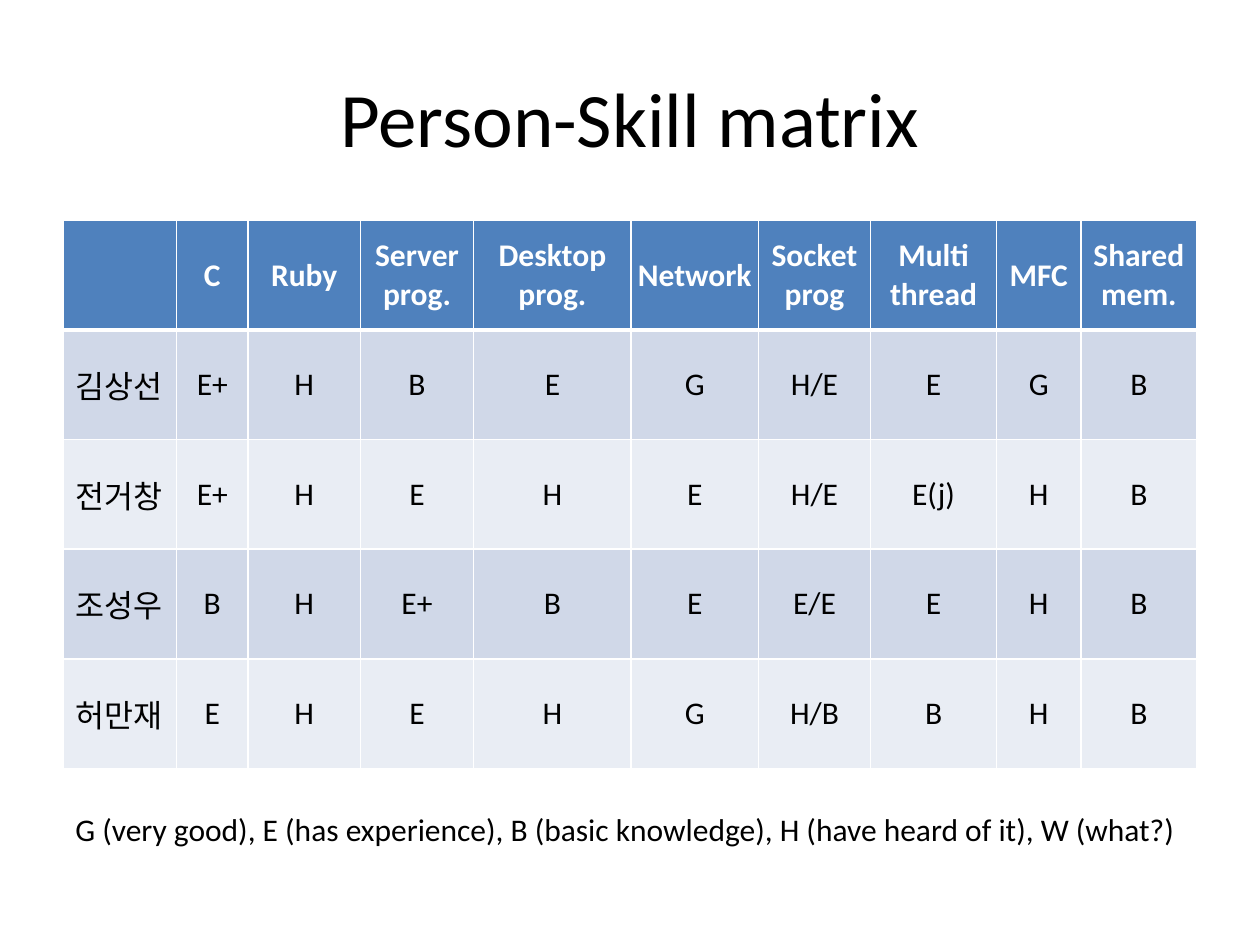
from pptx import Presentation
from pptx.dml.color import RGBColor
from pptx.enum.text import MSO_ANCHOR as Anchor, MSO_AUTO_SIZE as AutoSize, PP_ALIGN as Align
from pptx.oxml import parse_xml
from pptx.oxml.ns import nsdecls
from pptx.util import Inches, Pt

HEADERS = ["", "C", "Ruby", "Server prog.", "Desktop prog.", "Network",
           "Socket prog", "Multi\nthread", "MFC", "Shared mem."]
PEOPLE = [
    ["김상선", "E+", "H", "B", "E", "G", "H/E", "E", "G", "B"],
    ["전거창", "E+", "H", "E", "H", "E", "H/E", "E(j)", "H", "B"],
    ["조성우", "B", "H", "E+", "B", "E", "E/E", "E", "H", "B"],
    ["허만재", "E", "H", "E", "H", "G", "H/B", "B", "H", "B"],
]
COLUMN_WIDTHS = [0.9, 0.57, 0.89, 0.9, 1.25, 1.01, 0.89, 1, 0.67, 0.92]
ROW_HEIGHT = 0.87
LEGEND = ("G (very good), E (has experience), B (basic knowledge), "
          "H (have heard of it), W (what?)")


def color(hex_string):
    return RGBColor.from_string(hex_string)


class SlideBuilder:
    font = "Calibri"
    ink, white, header_fill = "000000", "FFFFFF", "4F81BD"
    bands = ("D0D8E8", "E9EDF4")
    body_size = 18

    def __init__(self, page):
        self.page = page

    def format_text(self, frame, size, ink, align, bold=False):
        for para in frame.paragraphs:
            para.alignment = align
            for span in para.runs:
                span.font.name = self.font
                span.font.size = Pt(size)
                span.font.bold = bold
                span.font.color.rgb = color(ink)

    def title(self, text, left, top, width, height):
        box = self.page.shapes.title
        box.left, box.top = Inches(left), Inches(top)
        box.width, box.height = Inches(width), Inches(height)
        box.text_frame.text = text
        box.text_frame.vertical_anchor = Anchor.MIDDLE
        self.format_text(box.text_frame, 44, self.ink, Align.CENTER)

    def text(self, text, left, top, width, height):
        box = self.page.shapes.add_textbox(Inches(left), Inches(top), Inches(width), Inches(height))
        frame = box.text_frame
        frame.word_wrap = True
        frame.auto_size = AutoSize.SHAPE_TO_FIT_TEXT
        frame.text = text
        self.format_text(frame, self.body_size, self.ink, Align.LEFT)

    def cell_borders(self, cell, top, bottom):
        """Draw white borders; top and bottom widths are in points."""
        properties = cell._tc.get_or_add_tcPr()
        widths = {"lnL": 1, "lnR": 1, "lnT": top, "lnB": bottom}
        for position, (side, width) in enumerate(widths.items()):
            properties.insert(position, parse_xml(
                f'<a:{side} {nsdecls("a")} w="{Pt(width)}"><a:solidFill>'
                f'<a:srgbClr val="{self.white}"/></a:solidFill></a:{side}>'))

    def table(self, rows, left, top, widths, row_height):
        """Add a table with a header row, a name column and banded rows."""
        table = self.page.shapes.add_table(
            len(rows), len(widths), Inches(left), Inches(top),
            Inches(sum(widths)), Inches(row_height * len(rows))).table
        for column, width in zip(table.columns, widths):
            column.width = Inches(width)
        for r, values in enumerate(rows):
            table.rows[r].height = Inches(row_height)
            header = r == 0
            fill = self.header_fill if header else self.bands[(r - 1) % 2]
            for c, value in enumerate(values):
                cell = table.cell(r, c)
                cell.text_frame.text = value
                cell.vertical_anchor = Anchor.MIDDLE
                if header:
                    cell.margin_left = cell.margin_right = 0
                cell.fill.solid()
                cell.fill.fore_color.rgb = color(fill)
                self.cell_borders(cell, 3 if r == 1 else 1, 3 if header else 1)
                self.format_text(cell.text_frame, self.body_size,
                                 self.white if header else self.ink,
                                 Align.CENTER if header or c else Align.LEFT, header)


def main():
    deck = Presentation()
    deck.slide_width, deck.slide_height = Inches(10), Inches(7.5)
    slide = SlideBuilder(deck.slides.add_slide(deck.slide_layouts[5]))
    slide.title("Person-Skill matrix", 0.5, 0.3, 9, 1.25)
    slide.table([HEADERS] + PEOPLE, 0.5, 1.75, COLUMN_WIDTHS, ROW_HEIGHT)
    slide.text(LEGEND, 0.5, 6.38, 9, 0.4)
    deck.save("out.pptx")


if __name__ == "__main__":
    main()
